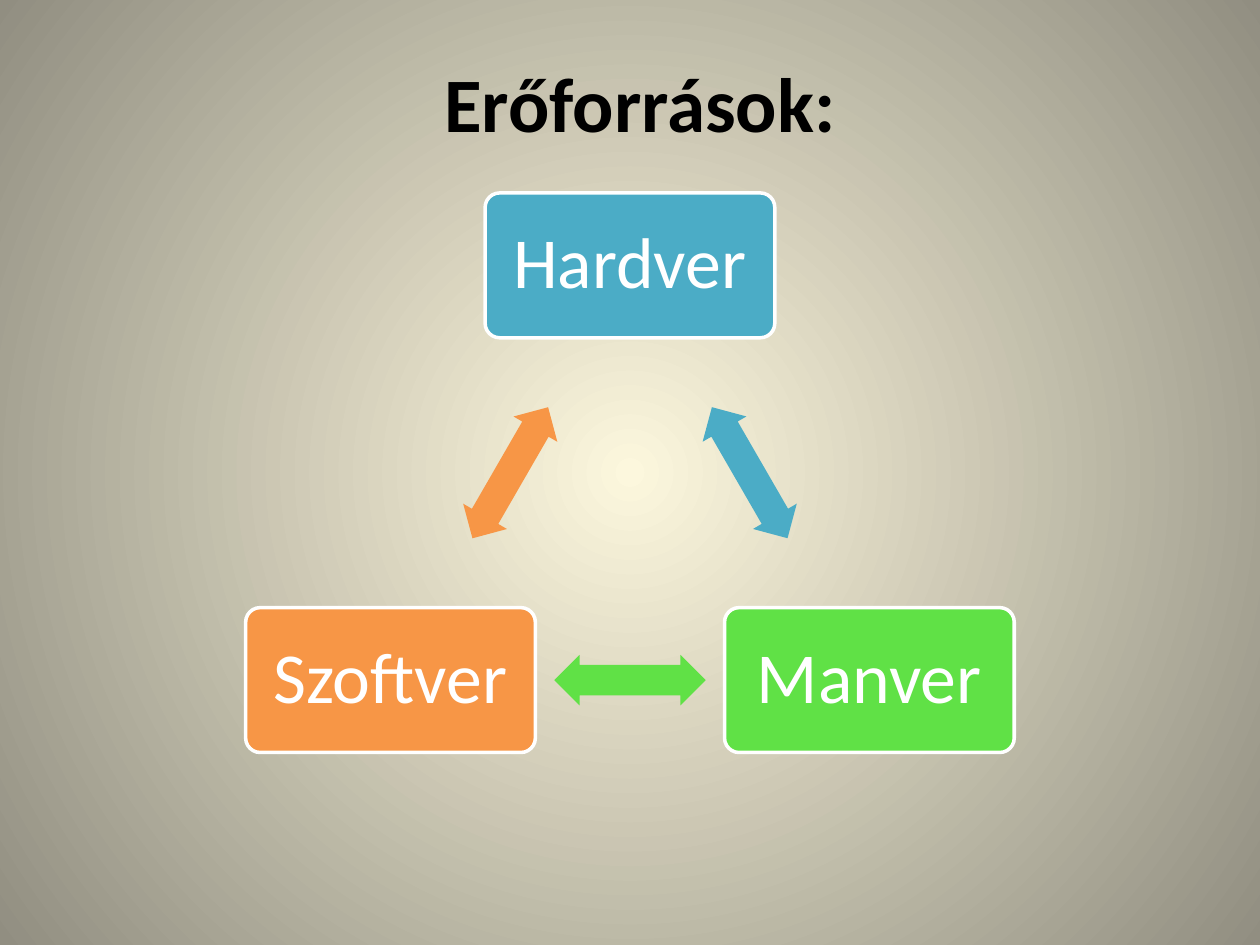
from math import cos, radians, sin

from lxml.etree import SubElement
from pptx import Presentation
from pptx.dml.color import RGBColor
from pptx.enum.shapes import MSO_SHAPE
from pptx.enum.text import MSO_ANCHOR, PP_ALIGN
from pptx.oxml.ns import qn
from pptx.util import Cm, Pt

BLACK = RGBColor(0x00, 0x00, 0x00)
WHITE = RGBColor(0xFF, 0xFF, 0xFF)
CREAM = RGBColor(0xFC, 0xF7, 0xDD)
STONE = RGBColor(0x91, 0x8E, 0x81)
BLUE = RGBColor(0x4B, 0xAC, 0xC6)
GREEN = RGBColor(0x60, 0xE1, 0x46)
ORANGE = RGBColor(0xF7, 0x96, 0x46)

RESOURCES = [("Hardver", BLUE), ("Manver", GREEN), ("Szoftver", ORANGE)]


def write_text(shape, text, *, size, color, bold=False, margin=0.25, spacing=1.0):
    frame = shape.text_frame
    frame.word_wrap = True
    frame.vertical_anchor = MSO_ANCHOR.MIDDLE
    frame.margin_left = frame.margin_right = Cm(margin)
    frame.margin_top = frame.margin_bottom = Cm(margin)
    paragraph = frame.paragraphs[0]
    paragraph.alignment = PP_ALIGN.CENTER
    paragraph.line_spacing = spacing
    run = paragraph.add_run()
    run.text = text
    run.font.name = "Calibri"
    run.font.size = Pt(size)
    run.font.bold = bold
    run.font.color.rgb = color


def paint_background(slide):
    fill = slide.background.fill
    fill.gradient()
    for stop, color in zip(fill.gradient_stops, (CREAM, STONE)):
        stop.color.rgb = color
    for stop, position in zip(fill.gradient_stops, (0, 1)):
        stop.position = position
    gradient = next(slide.element.iter(qn("a:gradFill")))
    gradient.remove(gradient.find(qn("a:lin")))
    circle = SubElement(gradient, qn("a:path"), path="circle")
    SubElement(circle, qn("a:fillToRect"), l="50000", t="50000", r="50000", b="50000")


def add_title(slide, left, top, width, height):
    title = slide.shapes.add_textbox(Cm(left), Cm(top), Cm(width), Cm(height))
    write_text(title, "Erőforrások:", size=44, color=BLACK, bold=True)


def add_centred(slide, kind, center_x, center_y, width, height, color):
    shape = slide.shapes.add_shape(
        kind, Cm(center_x - width / 2), Cm(center_y - height / 2), Cm(width), Cm(height)
    )
    shape.shadow.inherit = False
    shape.fill.solid()
    shape.fill.fore_color.rgb = color
    return shape


def add_cycle(slide, left, top, width, height):
    node_width, node_height = 5.84, 2.92
    radius = (height - node_height) / 1.5
    center_x = left + width / 2
    center_y = top + node_height / 2 + radius
    step = 360 / len(RESOURCES)

    for index, (name, color) in enumerate(RESOURCES):
        angle = radians(index * step - 90)
        node = add_centred(
            slide, MSO_SHAPE.ROUNDED_RECTANGLE,
            center_x + radius * cos(angle), center_y + radius * sin(angle),
            node_width, node_height, color,
        )
        node.adjustments[0] = 0.1
        node.line.color.rgb = WHITE
        node.line.width = Pt(2)
        write_text(node, name, size=41, color=WHITE, margin=0.43, spacing=0.9)

        between = angle + radians(step / 2)
        arrow = add_centred(
            slide, MSO_SHAPE.LEFT_RIGHT_ARROW,
            center_x + radius / 2 * cos(between), center_y + radius / 2 * sin(between),
            3.05, 1.02, color,
        )
        arrow.adjustments[0] = 0.6
        arrow.adjustments[1] = 0.5
        arrow.line.fill.background()
        arrow.rotation = step / 2 + index * step


def main():
    presentation = Presentation()
    presentation.slide_width = Cm(25.4)
    presentation.slide_height = Cm(19.05)
    slide = presentation.slides.add_slide(presentation.slide_layouts[6])
    paint_background(slide)
    add_title(slide, 2.11, 0, 21.59, 4.09)
    add_cycle(slide, 4.95, 3.89, 15.5, 11.28)
    presentation.save("out.pptx")


if __name__ == "__main__":
    main()
